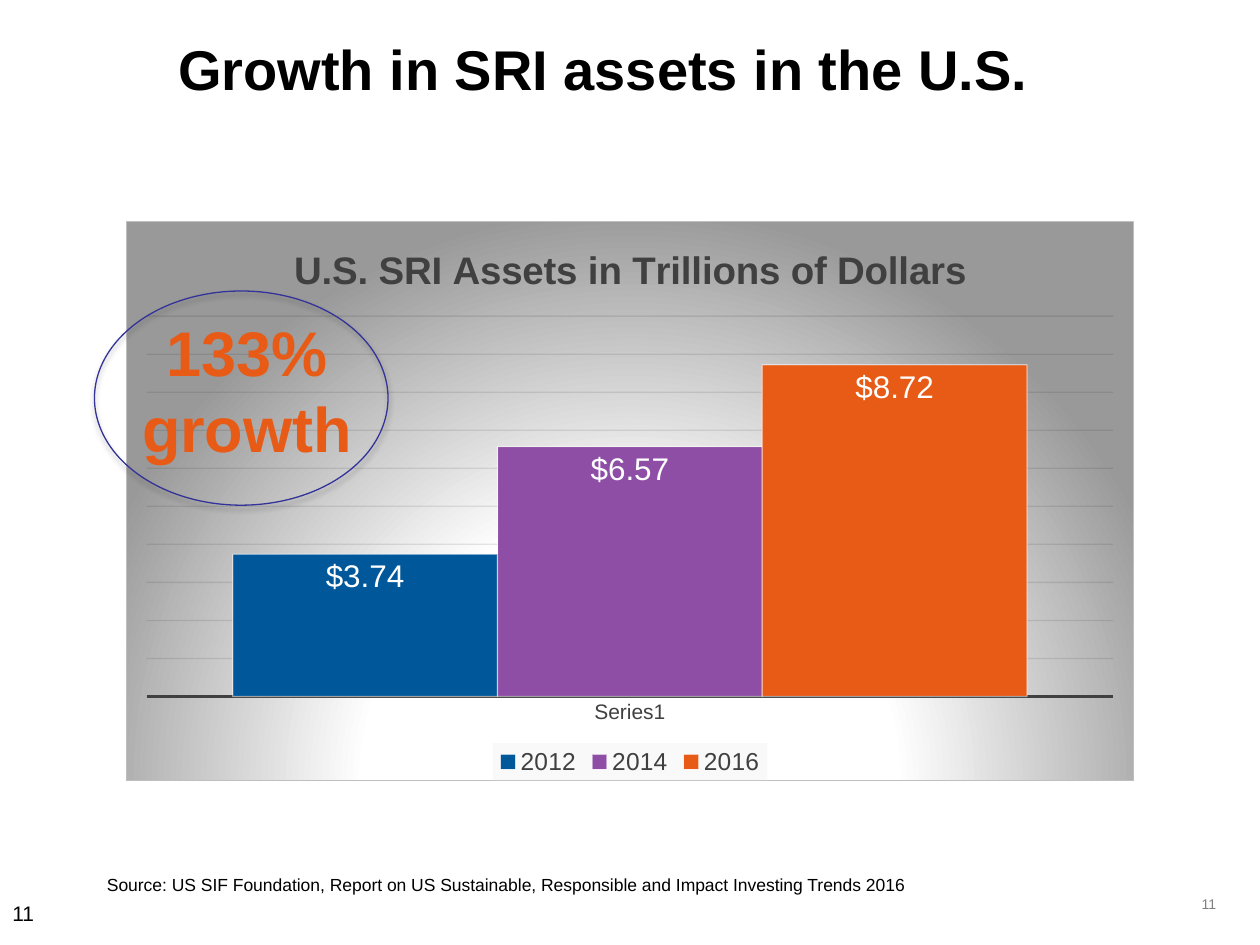
from dataclasses import dataclass

from lxml.etree import SubElement
from pptx import Presentation
from pptx.chart.data import CategoryChartData
from pptx.dml.color import RGBColor
from pptx.enum.chart import XL_CHART_TYPE, XL_LABEL_POSITION, XL_LEGEND_POSITION, XL_TICK_MARK
from pptx.enum.shapes import MSO_SHAPE
from pptx.enum.text import MSO_ANCHOR, PP_ALIGN
from pptx.oxml import parse_xml
from pptx.oxml.ns import nsdecls, qn
from pptx.util import Inches, Pt


@dataclass(frozen=True)
class Theme:
    font: str = "Arial"
    black: str = "000000"
    white: str = "FFFFFF"
    dark: str = "404040"
    grey: str = "808080"
    grid: str = "0D0D0D"
    border: str = "BFBFBF"
    shade: str = "999999"
    legend: str = "F2F2F2"
    blue: str = "00589A"
    purple: str = "8E4EA6"
    orange: str = "E85B16"
    navy: str = "333399"
    title: int = 32
    callout: int = 36
    chart_title: int = 22
    value: int = 18
    legend_size: int = 14
    normal: int = 12
    source: int = 10
    page: int = 8


THEME = Theme()
ASSETS = (("2012", 3.74, THEME.blue), ("2014", 6.57, THEME.purple), ("2016", 8.72, THEME.orange))


def style_font(font, size, color, bold=False):
    font.name = THEME.font
    font.size = Pt(size)
    font.bold = bold
    font.color.rgb = RGBColor.from_string(color)


def style_line(line, color, width):
    line.color.rgb = RGBColor.from_string(color)
    line.width = Pt(width)


def set_opacity(line_element, percent):
    color = next(line_element.iter(qn("a:srgbClr")))
    SubElement(color, qn("a:alpha")).set("val", str(percent * 1000))


def write_text(frame, text, *, size, color=THEME.black, bold=False,
               align=PP_ALIGN.LEFT, anchor=MSO_ANCHOR.TOP):
    """Fill a text frame, one paragraph for each line of text."""
    frame.word_wrap = True
    frame.vertical_anchor = anchor
    frame.text = text
    for para in frame.paragraphs:
        para.alignment = align
        for span in para.runs:
            style_font(span.font, size, color, bold)


def add_text(page, left, top, width, height, text, **text_format):
    box = page.shapes.add_textbox(Inches(left), Inches(top), Inches(width), Inches(height))
    write_text(box.text_frame, text, **text_format)
    return box


def add_title(page, text):
    title = page.shapes.title
    title.left, title.top = Inches(0), Inches(0.25)
    title.width, title.height = Inches(9.58), Inches(0.58)
    write_text(title.text_frame, text, size=THEME.title, bold=True,
               align=PP_ALIGN.CENTER, anchor=MSO_ANCHOR.MIDDLE)


def fill_chart_area(chart):
    """Give the chart a radial gradient and a thin border."""
    area = parse_xml(
        f'<c:spPr {nsdecls("c", "a")}><a:gradFill><a:gsLst>'
        f'<a:gs pos="0"><a:srgbClr val="{THEME.white}"/></a:gs>'
        f'<a:gs pos="46000"><a:srgbClr val="{THEME.white}"/></a:gs>'
        f'<a:gs pos="100000"><a:srgbClr val="{THEME.shade}"/></a:gs></a:gsLst>'
        '<a:path path="circle"><a:fillToRect l="50000" t="130000" r="50000" b="-30000"/></a:path>'
        f'</a:gradFill><a:ln w="9525"><a:solidFill><a:srgbClr val="{THEME.border}"/>'
        '</a:solidFill></a:ln></c:spPr>')
    chart.element.find(qn("c:chart")).addnext(area)


def place_plot(chart, left, top, width, height):
    """Fix the inner plot area, in fractions of the chart."""
    plot_area = chart.element.find(qn("c:chart")).find(qn("c:plotArea"))
    for old in plot_area.findall(qn("c:layout")):
        plot_area.remove(old)
    edges = "".join(f'<c:{name} val="{value}"/>' for name, value in
                    (("x", left), ("y", top), ("w", width), ("h", height)))
    plot_area.insert(0, parse_xml(
        f'<c:layout {nsdecls("c")}><c:manualLayout><c:layoutTarget val="inner"/>'
        f'<c:xMode val="edge"/><c:yMode val="edge"/>{edges}</c:manualLayout></c:layout>'))


def style_axes(chart):
    category_axis, value_axis = chart.category_axis, chart.value_axis
    category_axis.major_tick_mark = XL_TICK_MARK.NONE
    style_font(category_axis.tick_labels.font, THEME.normal, THEME.dark)
    style_line(category_axis.format.line, THEME.dark, 1.5)
    value_axis.minimum_scale, value_axis.maximum_scale = 0, 10
    value_axis.major_unit = 1
    value_axis.has_major_gridlines = True
    style_line(value_axis.major_gridlines.format.line, THEME.grid, 0.75)
    set_opacity(value_axis._element.find(qn("c:majorGridlines")), 10)
    value_axis.visible = False


def style_series(series, color):
    series.format.fill.solid()
    series.format.fill.fore_color.rgb = RGBColor.from_string(color)
    style_line(series.format.line, THEME.white, 0.75)
    set_opacity(next(series._element.iter(qn("a:ln"))), 50)
    labels = series.data_labels
    labels.show_value = True
    labels.number_format = '"$"0.00'
    labels.number_format_is_linked = False
    labels.position = XL_LABEL_POSITION.INSIDE_END
    style_font(labels.font, THEME.value, THEME.white)


def style_legend(chart):
    chart.has_legend = True
    legend = chart.legend
    legend.position = XL_LEGEND_POSITION.BOTTOM
    legend.include_in_layout = False
    style_font(legend.font, THEME.legend_size, THEME.dark)
    legend._element.find(qn("c:txPr")).addprevious(parse_xml(
        f'<c:spPr {nsdecls("c", "a")}><a:solidFill><a:srgbClr val="{THEME.legend}">'
        '<a:alpha val="39000"/></a:srgbClr></a:solidFill></c:spPr>'))


def add_assets_chart(page):
    data = CategoryChartData()
    data.categories = ["Series1"]
    for year, value, _ in ASSETS:
        data.add_series(year, [value])
    chart = page.shapes.add_chart(XL_CHART_TYPE.COLUMN_CLUSTERED, Inches(1), Inches(1.75),
                                  Inches(8), Inches(4.45), data).chart
    style_font(chart.font, THEME.source, THEME.black)
    fill_chart_area(chart)
    place_plot(chart, 0.02, 0.17, 0.96, 0.68)
    chart.has_title = True
    write_text(chart.chart_title.text_frame, "U.S. SRI Assets in Trillions of Dollars",
               size=THEME.chart_title, color=THEME.dark, bold=True, align=PP_ALIGN.CENTER)
    chart.chart_title.include_in_layout = False
    style_axes(chart)
    style_legend(chart)
    plot = chart.plots[0]
    plot.vary_by_categories = False
    plot.gap_width = 65
    plot.overlap = 0
    for series, (_, _, color) in zip(plot.series, ASSETS):
        style_series(series, color)


def add_growth_ring(page):
    ring = page.shapes.add_shape(MSO_SHAPE.OVAL, Inches(0.75), Inches(2.31),
                                 Inches(2.33), Inches(1.7))
    ring.fill.background()
    style_line(ring.line, THEME.navy, 0.75)
    ring._element.spPr.append(parse_xml(
        f'<a:effectLst {nsdecls("a")}><a:outerShdw blurRad="{Pt(3.1)}" dist="{Pt(1.8)}" '
        f'dir="5400000" rotWithShape="0"><a:srgbClr val="{THEME.black}">'
        '<a:alpha val="35000"/></a:srgbClr></a:outerShdw></a:effectLst>'))


def main():
    deck = Presentation()
    deck.slide_width, deck.slide_height = Inches(10), Inches(7.5)
    page = deck.slides.add_slide(deck.slide_layouts[5])
    number = add_text(page, 9.25, 7, 0.5, 0.35, "11", size=THEME.page, color=THEME.grey,
                      align=PP_ALIGN.RIGHT, anchor=MSO_ANCHOR.MIDDLE)
    number.text_frame.margin_left = 0
    add_title(page, "Growth in SRI assets in the U.S.")
    add_text(page, 0, 7.1, 0.67, 0.4, "11", size=THEME.normal)
    add_text(page, 0.75, 6.89, 6.58, 0.27,
             "Source: US SIF Foundation, Report on US Sustainable, Responsible and Impact "
             "Investing Trends 2016", size=THEME.source)
    add_assets_chart(page)
    add_text(page, 0.42, 2.44, 3.08, 1.31, "133%\ngrowth", size=THEME.callout,
             color=THEME.orange, bold=True, align=PP_ALIGN.CENTER)
    add_growth_ring(page)
    deck.save("out.pptx")


if __name__ == "__main__":
    main()
